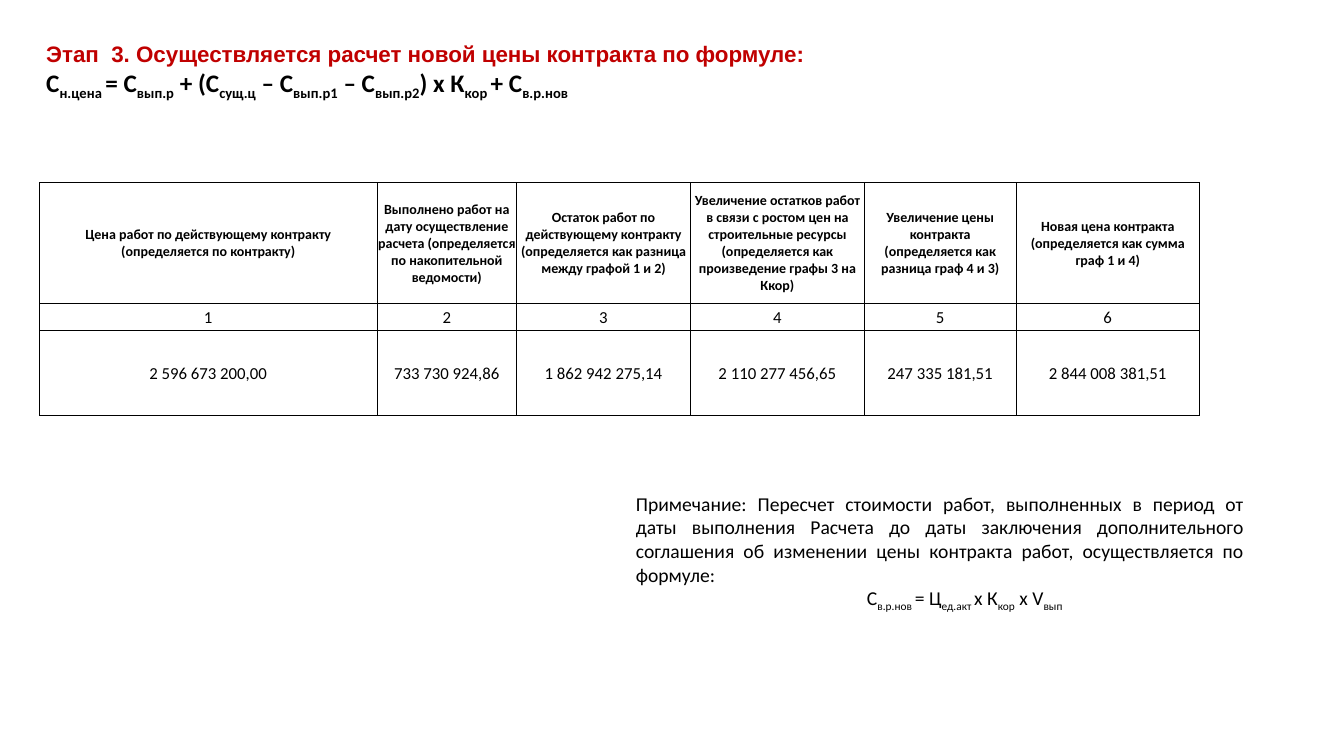
from lxml import etree
from pptx import Presentation
from pptx.dml.color import RGBColor
from pptx.enum.text import MSO_ANCHOR, MSO_AUTO_SIZE, PP_ALIGN
from pptx.oxml.ns import qn
from pptx.util import Pt

BLACK = RGBColor(0, 0, 0)
RED = RGBColor(0xC0, 0, 0)
LEFT, CENTER, JUSTIFY = PP_ALIGN.LEFT, PP_ALIGN.CENTER, PP_ALIGN.JUSTIFY
MIDDLE = MSO_ANCHOR.MIDDLE
GROW = MSO_AUTO_SIZE.SHAPE_TO_FIT_TEXT

TITLE = "Этап  3. Осуществляется расчет новой цены контракта по формуле:"
NOTE = ("Примечание: Пересчет стоимости работ, выполненных в период от даты "
        "выполнения Расчета до даты заключения дополнительного соглашения "
        "об изменении цены контракта работ, осуществляется по формуле:")

# Formula parts: plain text and subscript by turns
PRICE = ["С", "н.цена ", "= С", "вып.р", " + (С", "сущ.ц", " – С", "вып.р1",
         " – С", "вып.р2", ") х К", "кор ", "+ С", "в.р.нов"]
RECALC = ["С", "в.р.нов ", "= Ц", "ед.акт ", "х К", "кор", " х V", "вып"]

HEADS = [
    "Цена работ по действующему контракту (определяется по контракту)",
    "Выполнено работ на дату осуществление расчета "
    "(определяется по накопительной ведомости)",
    "Остаток работ по действующему контракту "
    "(определяется как разница между графой 1 и 2)",
    "Увеличение остатков работ в связи с ростом цен на строительные ресурсы "
    "(определяется как произведение графы 3 на Ккор)",
    "Увеличение цены контракта (определяется как разница граф 4 и 3)",
    "Новая цена контракта (определяется как сумма граф 1 и 4)",
]
SUMS = ["2 596 673 200,00", "733 730 924,86", "1 862 942 275,14",
        "2 110 277 456,65", "247 335 181,51", "2 844 008 381,51"]
WIDTHS = [241.2, 99.7, 124.2, 124.2, 108.4, 131]
HEIGHTS = [86.4, 19.4, 60.5]


def add_run(para, text, size, bold=False, color=BLACK, font="Calibri"):
    run = para.add_run()
    run.text = text
    run.font.size = Pt(size)
    run.font.bold = bold
    run.font.name = font
    run.font.color.rgb = color
    return run


def add_formula(para, parts, size, bold=False):
    for i, part in enumerate(parts):
        run = add_run(para, part, size, bold)
        if i % 2:
            run.font._element.set("baseline", "-25000")


def add_box(slide, left, top, width, height, align):
    """Return the two paragraphs of a new text box: lead and formula."""
    frame = slide.shapes.add_textbox(
        Pt(left), Pt(top), Pt(width), Pt(height)).text_frame
    frame.word_wrap = True
    frame.auto_size = GROW
    lead = frame.paragraphs[0]
    lead.alignment = align
    return lead, frame.add_paragraph()


def add_border(cell):
    props = cell._tc.get_or_add_tcPr()
    for side in ("lnL", "lnR", "lnT", "lnB"):
        line = etree.SubElement(props, qn("a:" + side), w=str(Pt(0.5)))
        fill = etree.SubElement(line, qn("a:solidFill"))
        etree.SubElement(fill, qn("a:srgbClr"), val=str(BLACK))


def fill_cell(cell, text, size, bold):
    cell.vertical_anchor = MIDDLE
    cell.margin_left = cell.margin_right = cell.margin_top = Pt(0.7)
    cell.margin_bottom = Pt(0)
    para = cell.text_frame.paragraphs[0]
    para.alignment = CENTER
    add_run(para, text, size, bold)
    add_border(cell)
    cell.fill.background()


def add_grid(slide, left, top, rows):
    table = slide.shapes.add_table(
        len(rows), len(WIDTHS), Pt(left), Pt(top),
        Pt(sum(WIDTHS)), Pt(sum(HEIGHTS))).table
    table.first_row = table.horz_banding = False
    for col, width in zip(table.columns, WIDTHS):
        col.width = Pt(width)
    for r, texts in enumerate(rows):
        table.rows[r].height = Pt(HEIGHTS[r])
        for c, text in enumerate(texts):
            fill_cell(table.cell(r, c), text, 12 if r else 10, r == 0)


def main():
    deck = Presentation()
    deck.slide_width, deck.slide_height = Pt(960), Pt(540)
    slide = deck.slides.add_slide(deck.slide_layouts[6])

    # Title and price formula
    lead, formula = add_box(slide, 25.9, 25.2, 906.5, 48.2, LEFT)
    add_run(lead, TITLE, 16, True, RED, "Arial")
    add_formula(formula, PRICE, 18, True)

    # Price table
    numbers = [str(n) for n in range(1, len(HEADS) + 1)]
    add_grid(slide, 28.1, 130.3, [HEADS, numbers, SUMS])

    # Note with its formula, first line indented
    lead, formula = add_box(slide, 447.1, 347.8, 448.6, 74.9, JUSTIFY)
    add_run(lead, NOTE, 14)
    formula.alignment = CENTER
    formula._p.get_or_add_pPr().set("indent", str(Pt(35.4)))
    add_formula(formula, RECALC, 14)

    deck.save("out.pptx")


if __name__ == "__main__":
    main()
